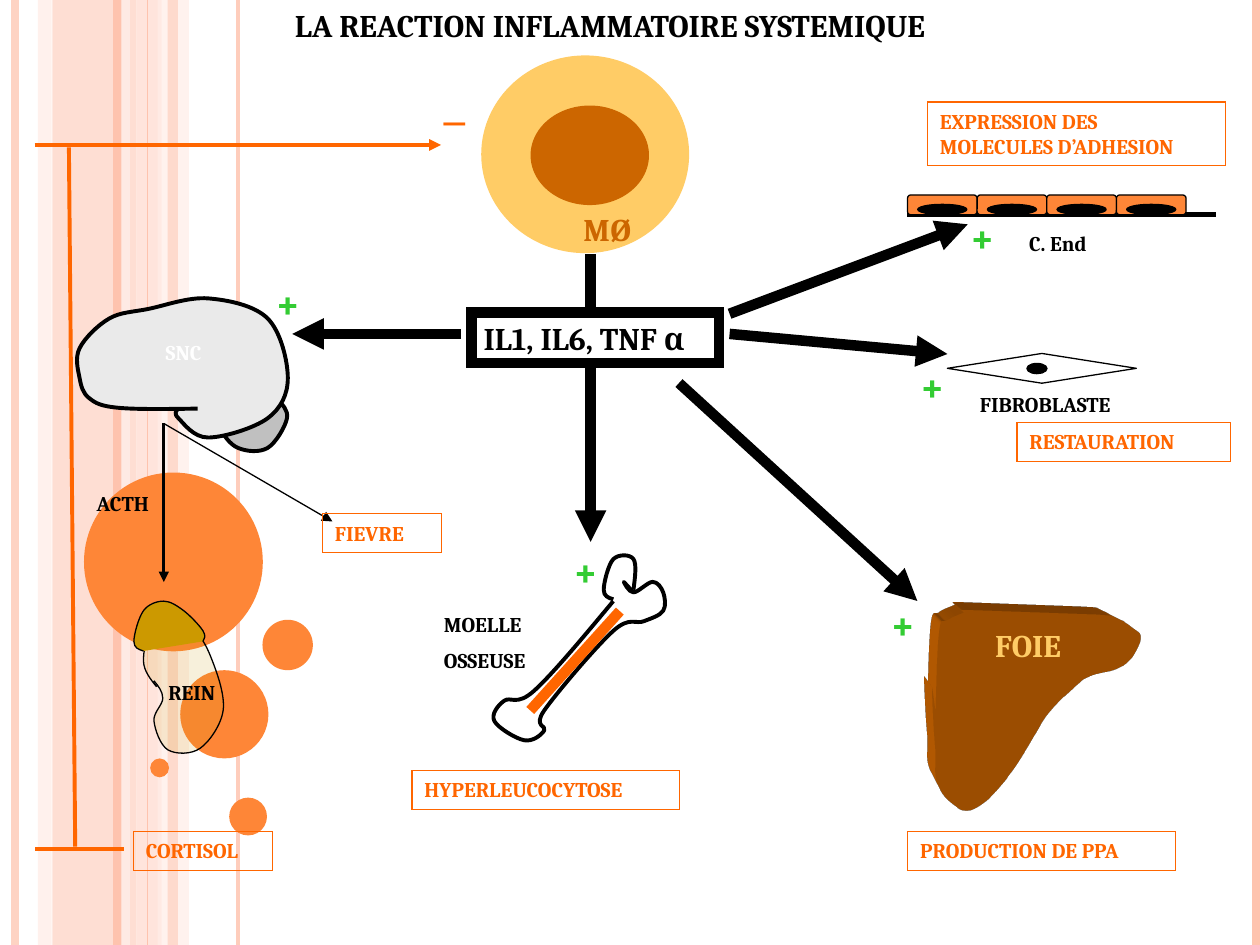
from dataclasses import dataclass
from typing import NamedTuple, Optional

from lxml.etree import SubElement
from pptx import Presentation
from pptx.dml.color import RGBColor
from pptx.enum.shapes import MSO_CONNECTOR as Connector, MSO_SHAPE as Preset
from pptx.enum.text import MSO_ANCHOR as Anchor, PP_ALIGN as Align
from pptx.oxml.ns import qn
from pptx.util import Pt


@dataclass(frozen=True)
class Theme:
    font: str = "Cambria"
    black: str = "000000"
    white: str = "FFFFFF"
    orange: str = "FF6600"
    accent: str = "FE8637"
    stripe: str = "FEC3AE"
    pale: str = "FFD9CE"
    palest: str = "FFEDE8"
    green: str = "33CC33"
    yellow: str = "FFCC66"
    brown: str = "CC6600"
    ochre: str = "CC9900"
    brain: str = "EAEAEA"
    cerebellum: str = "C0C0C0"
    small: int = 12
    large: int = 18
    dash: int = 20
    plus: int = 24


THEME = Theme()


class Block(NamedTuple):
    preset: Preset
    left: float
    top: float
    width: float
    height: float
    fill: Optional[str] = None
    line: Optional[str] = None
    line_width: float = 0.75
    opacity: int = 100


class Stroke(NamedTuple):
    start: tuple
    end: tuple
    color: str = THEME.black
    width: float = 6
    arrow: bool = False
    opacity: int = 100


class Label(NamedTuple):
    text: str
    left: float
    top: float
    width: float
    height: float = 21.6
    color: str = THEME.black
    size: int = THEME.small
    border: float = 0
    fill: Optional[str] = None


class Outline(NamedTuple):
    anchors: list
    fill: Optional[str] = None
    line_width: float = 0
    opacity: int = 100
    label: Optional[Label] = None
    solid: bool = False


def add_element(parent, tag: str, **attributes):
    return SubElement(parent, qn(tag), attributes)


def set_opacity(shape, opacity: int) -> None:
    if opacity < 100:
        color = next(shape.element.spPr.iter(qn("a:srgbClr")))
        add_element(color, "a:alpha", val=str(opacity * 1000))


def paint(shape, fill: Optional[str], line: Optional[str], line_width: float) -> None:
    shape.shadow.inherit = False
    if fill:
        shape.fill.solid()
        shape.fill.fore_color.rgb = RGBColor.from_string(fill)
    else:
        shape.fill.background()
    if line:
        shape.line.color.rgb = RGBColor.from_string(line)
        shape.line.width = Pt(line_width)
    else:
        shape.line.fill.background()


def draw_block(shapes, block: Block) -> None:
    shape = shapes.add_shape(block.preset, *map(Pt, block[1:5]))
    paint(shape, block.fill, block.line, block.line_width)
    set_opacity(shape, block.opacity)


def draw_stroke(shapes, stroke: Stroke) -> None:
    shape = shapes.add_connector(Connector.STRAIGHT, *map(Pt, stroke.start + stroke.end))
    shape.line.color.rgb = RGBColor.from_string(stroke.color)
    shape.line.width = Pt(stroke.width)
    set_opacity(shape, stroke.opacity)
    if stroke.arrow:
        add_element(shape.element.spPr.find(qn("a:ln")), "a:tailEnd", type="triangle")
    add_element(shape.element.spPr, "a:effectLst")


def curve_segments(anchors: list) -> list:
    segments = []
    last = len(anchors) - 1
    for index in range(last):
        start, end = anchors[index], anchors[index + 1]
        before, after = anchors[max(index - 1, 0)], anchors[min(index + 2, last)]
        leave = [s + (e - b) / 6 for s, e, b in zip(start, end, before)]
        arrive = [e - (a - s) / 6 for s, e, a in zip(start, end, after)]
        if index == 0:
            leave = [(s + c) / 2 for s, c in zip(start, arrive)]
        if index == last - 1:
            arrive = [(e + c) / 2 for e, c in zip(end, leave)]
        segments.append((leave, arrive, end))
    return segments


def bend_lines(shape, anchors: list) -> None:
    lines = list(shape.element.spPr.iter(qn("a:lnTo")))
    for line, segment in zip(lines, curve_segments(anchors)):
        curve = line.getparent().makeelement(qn("a:cubicBezTo"))
        for x, y in segment:
            add_element(curve, "a:pt", x=str(Pt(x) - shape.left), y=str(Pt(y) - shape.top))
        line.getparent().replace(line, curve)


def extrude(shape, color: str) -> None:
    properties = shape.element.spPr
    scene = add_element(properties, "a:scene3d")
    add_element(scene, "a:camera", prst="legacyPerspectiveTopLeft")
    add_element(scene, "a:lightRig", rig="legacyFlat3", dir="t")
    solid = add_element(properties, "a:sp3d", extrusionH="430200", prstMaterial="legacyMatte")
    add_element(add_element(solid, "a:extrusionClr"), "a:srgbClr", val=color)


def draw_outline(shapes, outline: Outline) -> None:
    points = [(Pt(x), Pt(y)) for x, y in outline.anchors]
    builder = shapes.build_freeform(*points[0], scale=1.0)
    builder.add_line_segments(points[1:], close=not outline.line_width)
    shape = builder.convert_to_shape()
    bend_lines(shape, outline.anchors)
    paint(shape, outline.fill, THEME.black if outline.line_width else None, outline.line_width)
    set_opacity(shape, outline.opacity)
    if outline.solid:
        extrude(shape, outline.fill)
    if outline.label:
        write_text(shape, outline.label)
        shape.text_frame.margin_left = Pt(outline.label.left) - shape.left
        shape.text_frame.margin_top = Pt(outline.label.top) - shape.top


def write_text(shape, label: Label) -> None:
    frame = shape.text_frame
    frame.text = label.text
    frame.word_wrap = True
    frame.vertical_anchor = Anchor.TOP
    for index, paragraph in enumerate(frame.paragraphs):
        paragraph.alignment = Align.LEFT
        paragraph.space_before = Pt(label.size / 2 if index else 0)
        for run in paragraph.runs:
            run.font.name = THEME.font
            run.font.size = Pt(label.size)
            run.font.bold = True
            run.font.color.rgb = RGBColor.from_string(label.color)


def draw_label(shapes, label: Label) -> None:
    place = list(map(Pt, label[1:5]))
    if label.border:
        shape = shapes.add_shape(Preset.RECTANGLE, *place)
        paint(shape, label.fill, label.color, label.border)
        add_element(shape.element.spPr.find(qn("a:ln")), "a:miter", lim="800000")
    else:
        shape = shapes.add_textbox(*place)
    write_text(shape, label)


def bordered(text: str, left: float, top: float, width: float, height: float = 22.3) -> Label:
    return Label(text, left, top, width, height, THEME.orange, border=0.75)


def band(left: float, width: float, color: str, opacity: int) -> Block:
    return Block(Preset.RECTANGLE, left, 0, width, 540, color, opacity=opacity)


def rule(x: float, width: float, color: str = THEME.stripe, opacity: int = 100) -> Stroke:
    return Stroke((x, 0), (x, 540), color, width, opacity=opacity)


def disc(left: float, top: float, width: float, height: float, color: str) -> Block:
    return Block(Preset.OVAL, left, top, width, height, color)


BACKGROUND = [
    band(30, 48, THEME.stripe, 54), band(21.6, 8, THEME.pale, 36),
    band(78, 14.4, THEME.pale, 70), band(90, 18, THEME.palest, 71),
    rule(8.6, 4.5, opacity=73), rule(72, 4.5, THEME.palest, 83), rule(67, 4.5),
    rule(136, 2.25, opacity=82), rule(84.2, 0.75), rule(717.8, 4.5),
    band(95.8, 5.8, THEME.stripe, 51),
    *(disc(left, top, size, size, THEME.accent) for left, top, size in (
        (48, 270, 102.2), (103, 383, 50.4), (85.8, 433.4, 10.8),
        (131, 455.8, 21.6), (150, 354.2, 28.8)))]
ORGANS = [
    Outline([(125, 244), (136, 256), (153, 256), (164, 239), (158, 228)], THEME.cerebellum, 2.25),
    Outline([(113, 233.5), (67.5, 233), (51, 227.5), (45.5, 216), (45.5, 199), (62.5, 182),
             (85, 176.5), (119, 170.5), (153, 182), (164.5, 216), (153, 239), (119, 250),
             (102, 239), (102, 233.5)], THEME.brain, 2.25,
            label=Label("SNC", 94.7, 193.8, 56, color=THEME.white)),
    Outline([(535, 406), (537, 361), (541.5, 355), (551, 350.5), (556.5, 349), (626.5, 351.5),
             (638, 353.5), (646.5, 358.5), (652, 364.5), (646.5, 376.5), (638, 382.5),
             (623, 386.5), (614, 393), (602.5, 404), (596, 412.5), (588, 426), (578, 441.5),
             (565, 456.5), (553, 463), (543.5, 458), (538, 451.5), (535, 443), (535, 430.5),
             (534, 417), (533, 393), (535, 406)], THEME.brown, solid=True)]
BONE_AND_KIDNEY = [
    Outline([(350.5, 343.5), (305.5, 394.5), (288, 400.5), (282.5, 412), (299.5, 423),
             (311, 417.5), (311, 406), (350.5, 360.5), (368, 355), (379, 349), (379, 338.5),
             (373, 332.5), (362, 338.5), (356.5, 332.5), (362, 338.5)], None, 2.25),
    Outline([(362, 337), (362, 319.5), (350.5, 319.5), (345, 337), (350.5, 342.5)], None, 2.25),
    Outline([(89.5, 392.5), (82, 378), (88, 360.5), (110, 360.5), (121.5, 378), (127.5, 406),
             (114.5, 427.5), (96, 428.5), (88, 412), (93, 399), (88, 389)], THEME.ochre, 0.75, 14),
    Outline([(82, 372), (76.5, 366.5), (82, 349), (93.5, 343.5), (105, 349), (116, 360.5),
             (116, 366.5)], THEME.ochre, 0.75)]
ENDOTHELIUM = [518.6 + 39.8 * index for index in range(4)]
MACROPHAGE = [
    disc(275, 31.7, 118.8, 113, THEME.yellow), disc(303.2, 60.3, 67.7, 56.9, THEME.brown)]
CELLS = [
    Stroke((518.4, 122.4), (694.8, 122.4), width=3),
    *(Block(Preset.ROUNDED_RECTANGLE, left, 111.4, 39.8, 11.3, THEME.accent, THEME.black)
      for left in ENDOTHELIUM),
    *(Block(Preset.OVAL, left + 5.8, 116.8, 28.1, 5.8, THEME.black, THEME.black)
      for left in ENDOTHELIUM),
    Block(Preset.FLOWCHART_DECISION, 541.4, 202, 108, 17, None, THEME.black),
    Block(Preset.OVAL, 586.8, 207.7, 11.5, 5.8, THEME.black, THEME.black)]
ARROWS = [
    *(Stroke(start, end, arrow=True) for start, end in (
        ((337.5, 145.4), (337.5, 309.6)), ((263.5, 190.8), (167, 190.8)),
        ((416.9, 190.8), (541.4, 202.3)), ((416.9, 179.3), (553, 128.2)),
        ((388, 218.9), (524.2, 343.4)))),
    Stroke((303, 406), (354.2, 349.2), THEME.orange),
    Stroke((93.6, 242), (93.6, 332.6), width=1.5, arrow=True),
    Stroke((93.6, 242), (190, 298), width=0.75, arrow=True),
    Stroke((70.6, 485.3), (19.8, 485.3), THEME.orange, 2.25),
    Stroke((43, 483.8), (39.4, 84.2), THEME.orange, 2.25),
    Stroke((19.8, 82.8), (252, 82.8), THEME.orange, 2.25, True)]
LABELS = [
    Label("FOIE", 561.6, 354.4, 73.4, 28.8, THEME.yellow, THEME.large),
    Label("MØ", 326.2, 116.6, 51, 28.8, THEME.brown, THEME.large),
    Label("IL1, IL6, TNF α", 269.3, 178.7, 141.6, 28.8, size=THEME.large, border=6,
          fill=THEME.white),
    Label("REIN", 89.1, 384.8, 56.9),
    Label("MOELLE\nOSSEUSE", 246.6, 345.9, 73.4, 43.2),
    Label("FIBROBLASTE", 552.8, 220.3, 107.3), Label("C. End", 581, 128.2, 56.9),
    Label("ACTH", 48.2, 276.8, 56.9),
    Label("─", 246.6, 54.7, 28, 31, THEME.orange, THEME.dash),
    bordered("FIEVRE", 184.3, 293.6, 67.9), bordered("CORTISOL", 76.3, 475.2, 79.4),
    bordered("HYPERLEUCOCYTOSE", 235.4, 440.2, 152.8),
    bordered("PRODUCTION DE PPA", 518.8, 475.2, 152.8),
    bordered("RESTAURATION", 581.2, 241.6, 121.8),
    bordered("EXPRESSION DES MOLECULES D’ADHESION", 530, 58.3, 170.2, 36.5),
    *(Label("+", left, top, 33.8, 36, THEME.green, THEME.plus) for left, top in (
        (547.2, 116.6), (501.8, 337.7), (150.3, 154.5), (320.4, 307.4), (518.6, 202)))]
TITLE = Label("LA REACTION INFLAMMATOIRE SYSTEMIQUE", 161.3, 0, 442, 28.8, size=THEME.large)
DRAW = {Block: draw_block, Stroke: draw_stroke, Outline: draw_outline, Label: draw_label}


def main() -> None:
    presentation = Presentation()
    presentation.slide_width, presentation.slide_height = Pt(720), Pt(540)
    slide = presentation.slides.add_slide(presentation.slide_layouts[5])
    title = slide.shapes.title
    title.left, title.top, title.width, title.height = map(Pt, TITLE[1:5])
    write_text(title, TITLE)
    for item in BACKGROUND + ORGANS + MACROPHAGE + BONE_AND_KIDNEY + CELLS + ARROWS + LABELS:
        DRAW[type(item)](slide.shapes, item)
    presentation.save("out.pptx")


if __name__ == "__main__":
    main()
